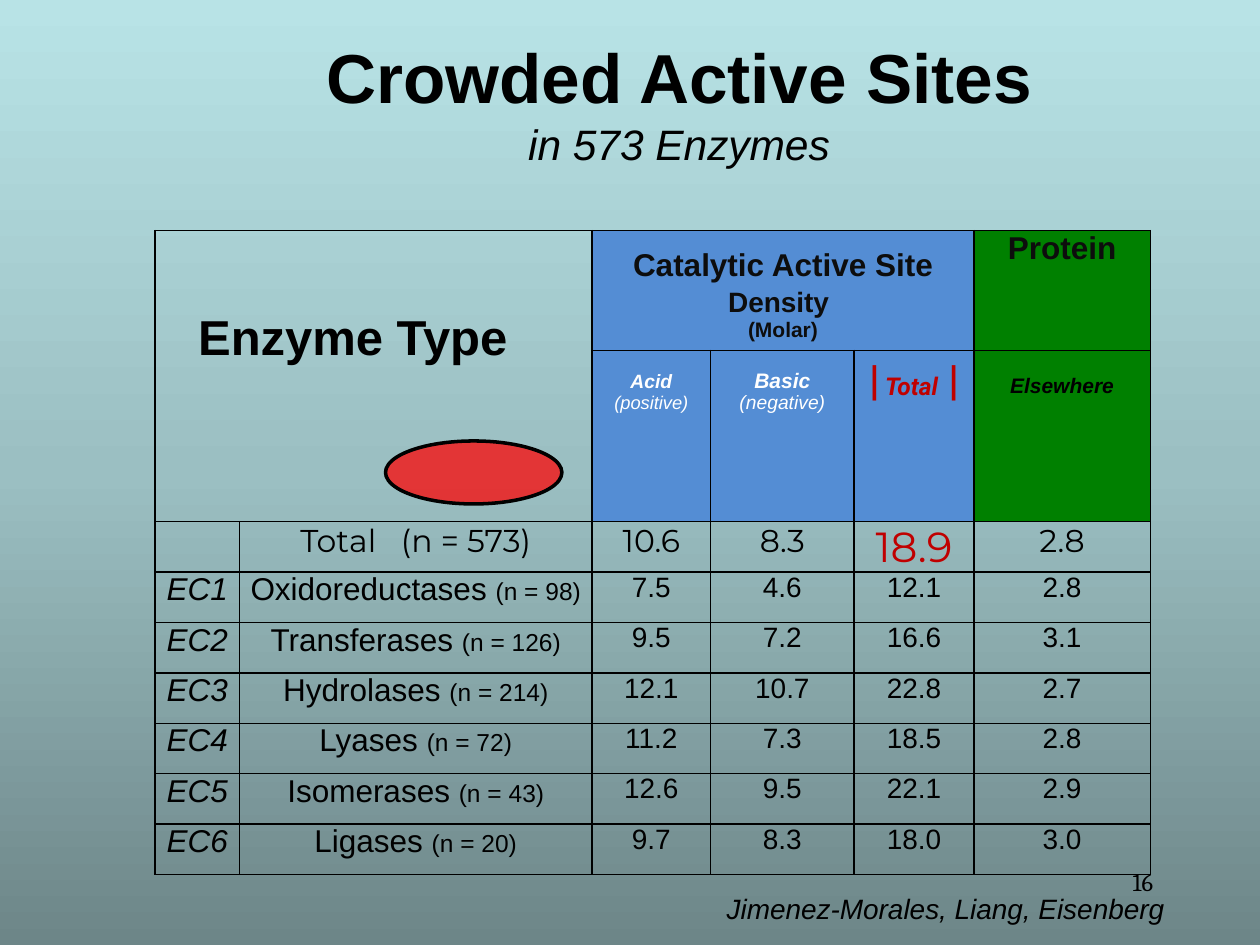
import copy

import pptx
import pptx.dml.color
import pptx.enum.shapes
import pptx.enum.text
import pptx.oxml
import pptx.oxml.ns
import pptx.util
from pptx.util import Inches

BLACK, INK, WHITE, RED = "000000", "0D0D0D", "FFFFFF", "C00000"
BLUE, GREEN = "548DD4", "008000"
ALIGN = pptx.enum.text.PP_ALIGN
COLS = [0.67, 2.8, 0.94, 1.14, 0.95, 1.4]
ROWS = [0.95, 1.36] + [0.4] * 7
ENZYMES = [
    ("EC1", "Oxidoreductases", 98, "7.5", "4.6", "12.1", "2.8"),
    ("EC2", "Transferases", 126, "9.5", "7.2", "16.6", "3.1"),
    ("EC3", "Hydrolases", 214, "12.1", "10.7", "22.8", "2.7"),
    ("EC4", "Lyases", 72, "11.2", "7.3", "18.5", "2.8"),
    ("EC5", "Isomerases", 43, "12.6", "9.5", "22.1", "2.9"),
    ("EC6", "Ligases", 20, "9.7", "8.3", "18.0", "3.0"),
]


def rgb(value):
    """Return the colour for a hex string."""
    return pptx.dml.color.RGBColor.from_string(value)


def style_font(font, size=None, name=None, color=None, bold=None, italic=None):
    """Set the given font properties and leave the others inherited."""
    if size:
        font.size = pptx.util.Pt(size)
    if name:
        font.name = name
    if color:
        font.color.rgb = rgb(color)
    if bold is not None:
        font.bold = bold
    if italic is not None:
        font.italic = italic


def write(p, runs, align=ALIGN.CENTER, spacing=None, **font):
    """Fill a paragraph from (text, overrides) pairs, where a newline is a break."""
    p.alignment = align
    if spacing:
        p.line_spacing = spacing
    style_font(p.font, **{"name": "Arial", "color": BLACK, **font})
    for text, overrides in runs:
        if text == "\n":
            p.add_line_break()
            continue
        r = p.add_run()
        r.text = text
        style_font(r.font, **overrides)


def add_text(slide, box, runs, anchor=pptx.enum.text.MSO_ANCHOR.TOP, **font):
    """Add a wrapping text box with one paragraph."""
    tf = slide.shapes.add_textbox(*map(Inches, box)).text_frame
    tf.word_wrap = True
    tf.vertical_anchor = anchor
    write(tf.paragraphs[0], runs, **font)


def set_background(slide, colors):
    """Paint an upward gradient with evenly spaced stops."""
    fill = slide.background.fill
    fill.gradient()
    fill.gradient_angle = 90
    stops = next(slide.element.iter(pptx.oxml.ns.qn("a:gsLst")))
    while len(stops) < len(colors):
        stops.append(copy.deepcopy(stops[0]))
    for i, (stop, color) in enumerate(zip(fill.gradient_stops, colors)):
        stop.position = i / (len(colors) - 1)
        stop.color.rgb = rgb(color)


def add_ellipse(slide, box, color, opacity):
    """Add a translucent ellipse with a black outline."""
    sp = slide.shapes.add_shape(pptx.enum.shapes.MSO_SHAPE.OVAL, *map(Inches, box))
    sp.shadow.inherit = False
    sp.fill.solid()
    sp.fill.fore_color.rgb = rgb(color)
    sp.line.color.rgb = rgb(BLACK)
    sp.line.width = pptx.util.Pt(2)
    clr = next(sp.element.spPr.iter(pptx.oxml.ns.qn("a:srgbClr")))
    clr.append(pptx.oxml.parse_xml(
        f'<a:alpha {pptx.oxml.ns.nsdecls("a")} val="{opacity * 1000}"/>'))


def add_grid(slide, left, top):
    """Add an unfilled table with thin black borders."""
    sp = slide.shapes.add_table(len(ROWS), len(COLS), Inches(left), Inches(top),
                                Inches(sum(COLS)), Inches(sum(ROWS)))
    table = sp.table
    table.first_row = table.horz_banding = False
    for col, width in zip(table.columns, COLS):
        col.width = Inches(width)
    for row, height in zip(table.rows, ROWS):
        row.height = Inches(height)
    for cell in table.iter_cells():
        cell.margin_left = cell.margin_right = Inches(0.07)
        cell.margin_top = cell.margin_bottom = 0
        tc_pr = cell._tc.get_or_add_tcPr()
        for side in "LRTB":
            tc_pr.append(pptx.oxml.parse_xml(
                f'<a:ln{side} {pptx.oxml.ns.nsdecls("a")} w="12700"><a:solidFill>'
                f'<a:srgbClr val="{BLACK}"/></a:solidFill></a:ln{side}>'))
        cell.fill.background()
    return table


def fill_cell(cell, runs, fill=None, top=0, **font):
    """Write the first paragraph of a cell, with optional fill and top inset."""
    if fill:
        cell.fill.solid()
        cell.fill.fore_color.rgb = rgb(fill)
    cell.margin_top = Inches(top)
    write(cell.text_frame.paragraphs[0], runs, **font)


def fill_header(table):
    """Write the two header rows."""
    table.cell(0, 0).merge(table.cell(1, 1))
    table.cell(0, 2).merge(table.cell(0, 4))
    fill_cell(table.cell(0, 0), [("Enzyme Type", {})], top=0.64, size=28, bold=True)
    table.cell(0, 0).margin_right = Inches(0.4)

    density = table.cell(0, 2)
    fill_cell(density, [("Catalytic Active Site", {})], BLUE,
              spacing=1.5, size=18, color=INK, bold=True)
    write(density.text_frame.add_paragraph(),
          [("Density", {"size": 16}), (" ", {"size": 18}), ("\n", {}),
           ("(Molar)", {"size": 12})], color=INK, bold=True)
    fill_cell(table.cell(0, 5), [("Protein", {})], GREEN,
              size=18, color=INK, bold=True)

    charges = [("Acid", 11, "(positive)", 10.5), ("Basic", 12, "(negative)", 11)]
    for col, (name, size, sign, sign_size) in enumerate(charges, 2):
        fill_cell(table.cell(1, col),
                  [(name, {"size": size, "bold": True}), ("\n", {}),
                   (sign, {"size": sign_size, "bold": False})],
                  BLUE, top=0.17, spacing=pptx.util.Pt(12), color=WHITE, italic=True)
    bar = ("|", {"size": 24, "italic": False})
    fill_cell(table.cell(1, 4),
              [bar, (" ", {"size": 14}), ("Total", {"size": 14}),
               (" ", {"size": 24}), bar],
              BLUE, top=0.22, spacing=pptx.util.Pt(16), name="Roboto",
              color=RED, bold=True, italic=True)
    fill_cell(table.cell(1, 5), [("Elsewhere", {})], GREEN, top=0.19,
              size=12, bold=True, italic=True)


def fill_body(table):
    """Write the total row and one row for each enzyme class."""
    totals = ["Total   (n = 573)", "10.6", "8.3", "18.9", "2.8"]
    for col, text in enumerate(totals, 1):
        accent = {"size": 24, "color": RED} if col == 4 else {"size": 18}
        fill_cell(table.cell(2, col), [(text, {})], name="Montserrat", **accent)
    for row, (code, name, count, *values) in enumerate(ENZYMES, 3):
        fill_cell(table.cell(row, 0), [(code, {})], size=18, italic=True)
        fill_cell(table.cell(row, 1),
                  [(f"{name} ", {"size": 18}), (f"(n = {count})", {"size": 14})])
        for col, value in enumerate(values, 2):
            fill_cell(table.cell(row, col), [(value, {})], size=16)


def main():
    """Build and save the slide."""
    prs = pptx.Presentation()
    prs.slide_width, prs.slide_height = Inches(10), Inches(7.5)
    slide = prs.slides.add_slide(prs.slide_layouts[6])
    set_background(slide, ["6D8688", "9BBFC2", "B8E3E6"])
    add_ellipse(slide, (3.06, 3.5, 1.4, 0.5), "FF0000", 72)
    add_text(slide, (1.14, 0.46, 8.5, 0.69),
             [("Crowded Active Sites", {"size": 39.6, "bold": True}), ("\n", {}),
              ("in 573 Enzymes", {"size": 24.3, "italic": True})],
             anchor=pptx.enum.text.MSO_ANCHOR.MIDDLE)
    add_text(slide, (7.17, 6.83, 2.08, 0.5), [("16", {})],
             align=ALIGN.RIGHT, size=14, name="Cambria")
    table = add_grid(slide, 1.23, 1.83)
    fill_header(table)
    fill_body(table)
    add_text(slide, (5.45, 7.03, 4.11, 0.37),
             [("Jimenez-Morales, Liang, Eisenberg", {})], size=16, italic=True)
    prs.save("out.pptx")


if __name__ == "__main__":
    main()
